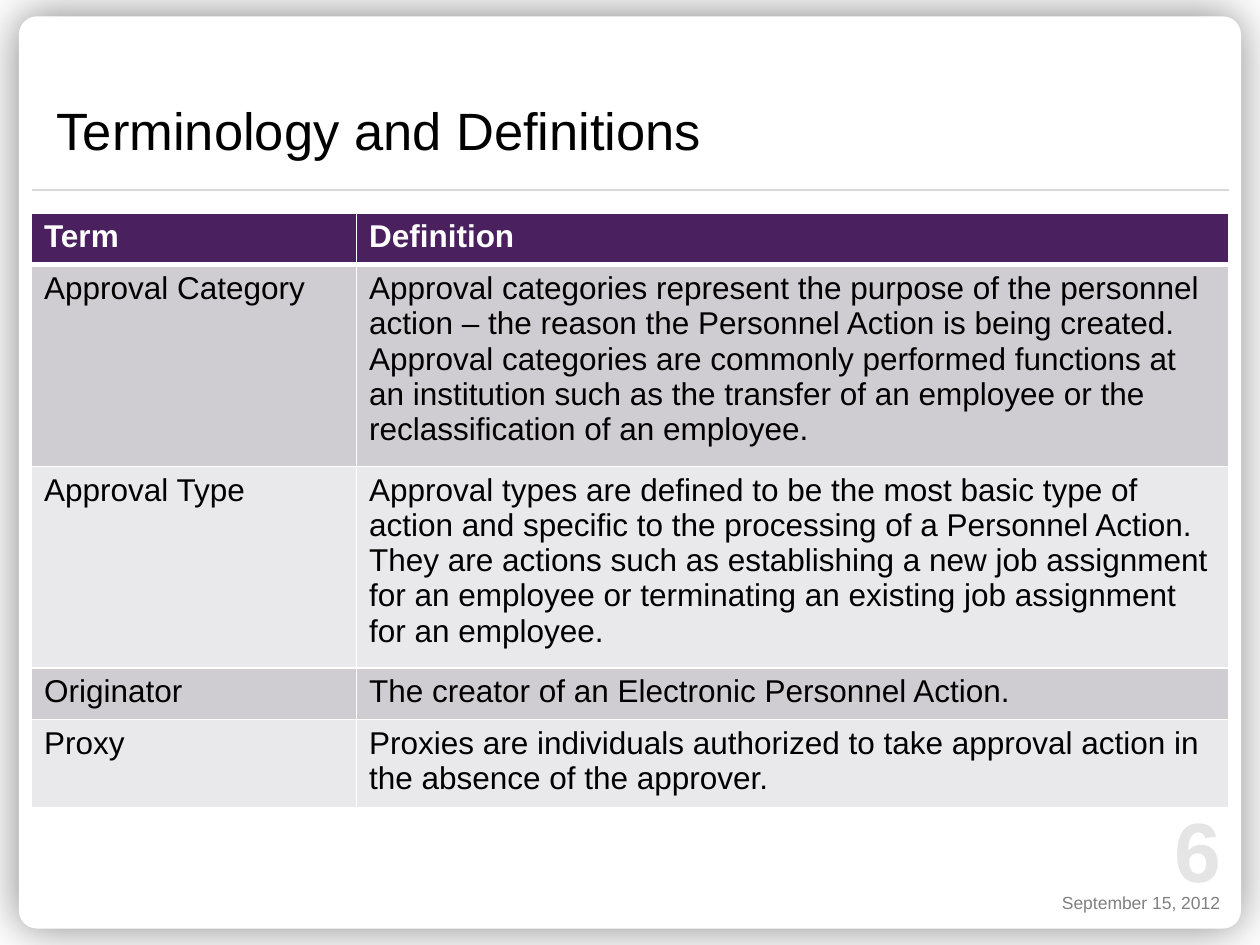
from lxml import etree
from pptx import Presentation
from pptx.dml.color import RGBColor
from pptx.enum import shapes, text
from pptx.oxml import parse_xml
from pptx.oxml.ns import nsdecls, qn
from pptx.util import Inches, Pt

TITLE = "Terminology and Definitions"
PAGE_NUMBER = "6"
DATE = "September 15, 2012"
ROWS = [
    ("Term", "Definition"),
    ("Approval Category",
     "Approval categories represent the purpose of the personnel action – the reason "
     "the Personnel Action is being created. Approval categories are commonly performed "
     "functions at an institution such as the transfer of an employee or the "
     "reclassification of an employee."),
    ("Approval Type",
     "Approval types are defined to be the most basic type of action and specific to "
     "the processing of a Personnel Action. They are actions such as establishing a new "
     "job assignment for an employee or terminating an existing job assignment for an "
     "employee."),
    ("Originator", "The creator of an Electronic Personnel Action."),
    ("Proxy",
     "Proxies are individuals authorized to take approval action in the absence of the "
     "approver."),
]
COLUMN_WIDTHS = (2.58, 6.92)
ROW_HEIGHT = 0.41
MARGIN = 0.25
CONTENT_WIDTH = sum(COLUMN_WIDTHS)
HEADER_FILL = "4B205E"
BAND_FILLS = ("D0CDD2", "E9E8EA")


def color(value):
    return RGBColor.from_string(value)


def style(para, size, value, bold=False):
    para.font.name = "Arial"
    para.font.size = Pt(size)
    para.font.bold = bold
    para.font.color.rgb = color(value)


def add_text(page, content, bounds, insets, size, value, align, bold=False):
    box = page.shapes.add_textbox(*map(Inches, bounds))
    frame = box.text_frame
    frame.word_wrap = True
    frame.vertical_anchor = text.MSO_ANCHOR.BOTTOM
    side, end = map(Inches, insets)
    frame.margin_left = frame.margin_right = side
    frame.margin_top = frame.margin_bottom = end
    para = frame.paragraphs[0]
    para.text = content
    para.alignment = align
    style(para, size, value, bold)


def add_panel(page):
    panel = page.shapes.add_shape(
        shapes.MSO_SHAPE.ROUNDED_RECTANGLE, *map(Inches, (0.15, 0.13, 9.7, 7.24)))
    panel.adjustments[0] = 0.02
    panel.fill.solid()
    panel.fill.fore_color.rgb = color("FFFFFF")
    panel.line.fill.background()
    panel._element.spPr.append(parse_xml(
        f'<a:effectLst {nsdecls("a")}><a:outerShdw blurRad="{Pt(27)}" dist="0" dir="0" '
        'algn="ctr" rotWithShape="0"><a:srgbClr val="000000"><a:alpha val="46800"/>'
        '</a:srgbClr></a:outerShdw></a:effectLst>'))


def add_rule(page):
    rule = page.shapes.add_connector(
        shapes.MSO_CONNECTOR.STRAIGHT,
        *map(Inches, (MARGIN, 1.51, MARGIN + CONTENT_WIDTH, 1.51)))
    rule.line.color.rgb = color("D9D9D9")
    rule.line.width = Pt(1)
    etree.SubElement(rule._element.spPr, qn("a:effectLst"))


def set_borders(cell, widths):
    properties = cell._tc.get_or_add_tcPr()
    for side, width in widths.items():
        properties.append(parse_xml(
            f'<a:ln{side} {nsdecls("a")} w="{Pt(width)}"><a:solidFill>'
            f'<a:srgbClr val="FFFFFF"/></a:solidFill></a:ln{side}>'))


def add_terms(page):
    table = page.shapes.add_table(
        len(ROWS), len(COLUMN_WIDTHS), Inches(MARGIN), Inches(1.69),
        Inches(CONTENT_WIDTH), Inches(ROW_HEIGHT * len(ROWS))).table
    for column, width in zip(table.columns, COLUMN_WIDTHS):
        column.width = Inches(width)
    for row_index, row in enumerate(ROWS):
        table.rows[row_index].height = Inches(ROW_HEIGHT)
        header = row_index == 0
        widths = {"L": 1, "R": 1, "T": 3 if row_index == 1 else 1, "B": 3 if header else 1}
        for column_index, content in enumerate(row):
            cell = table.cell(row_index, column_index)
            set_borders(cell, widths)
            cell.fill.solid()
            cell.fill.fore_color.rgb = color(
                HEADER_FILL if header else BAND_FILLS[(row_index - 1) % 2])
            cell.text = content
            style(cell.text_frame.paragraphs[0], 18,
                  "FFFFFF" if header else "000000", header)


def main():
    deck = Presentation()
    deck.slide_width, deck.slide_height = Inches(10), Inches(7.5)
    page = deck.slides.add_slide(deck.slide_layouts[6])
    page.background.fill.solid()
    page.background.fill.fore_color.rgb = color("FFFFFF")
    add_panel(page)
    add_rule(page)
    right, left = text.PP_ALIGN.RIGHT, text.PP_ALIGN.LEFT
    add_text(page, PAGE_NUMBER, (8, 6.01, 1.79, 1.13), (0.1, 0), 48, "E5E5E5", right, True)
    add_text(page, DATE, (7.45, 6.79, 2.33, 0.46), (0.1, 0), 10, "808080", right)
    add_text(page, TITLE, (MARGIN, 0.23, CONTENT_WIDTH, 1.1), (0.2, 0.05), 30, "000000", left)
    add_terms(page)
    deck.save("out.pptx")


if __name__ == "__main__":
    main()
